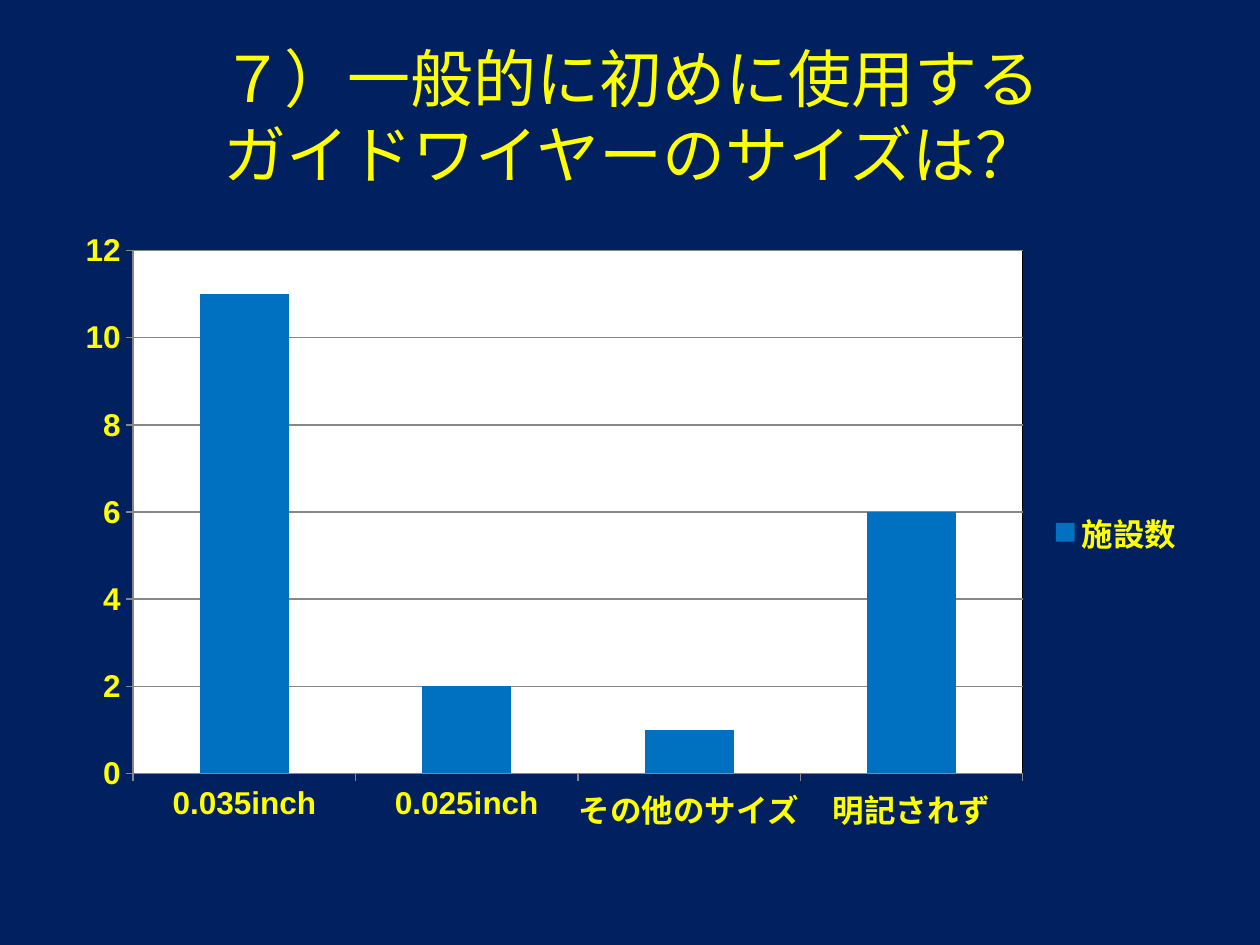
from dataclasses import dataclass

import pptx
import pptx.chart.data
import pptx.dml.color
import pptx.enum.chart
import pptx.enum.text
import pptx.oxml
import pptx.oxml.ns
import pptx.util
from pptx.util import Inches


@dataclass(frozen=True)
class Theme:
    font: str = "Arial"
    background: str = "002060"
    text: str = "FFFF00"
    bar: str = "0070C0"
    plot: str = "FFFFFF"
    plot_border: str = "000000"
    axis: str = "878787"
    title_size: int = 36
    chart_size: int = 18


THEME = Theme()


def color(value):
    return pptx.dml.color.RGBColor.from_string(value)


def style_font(font, size, bold):
    font.name = THEME.font
    font.size = pptx.util.Pt(size)
    font.bold = bold
    font.color.rgb = color(THEME.text)


def set_background(slide):
    fill = slide.background.fill
    fill.solid()
    fill.fore_color.rgb = color(THEME.background)


def add_title(slide, text):
    box = slide.shapes.add_textbox(Inches(0.51), Inches(0.29), Inches(9), Inches(1.25))
    frame = box.text_frame
    frame.word_wrap = True
    frame.vertical_anchor = pptx.enum.text.MSO_ANCHOR.MIDDLE
    paragraph = frame.paragraphs[0]
    paragraph.text = text
    paragraph.alignment = pptx.enum.text.PP_ALIGN.CENTER
    style_font(paragraph.font, THEME.title_size, False)


def fill_plot_area(chart):
    """Give the plot area its fill and border, which python-pptx does not expose."""
    properties = pptx.oxml.parse_xml(
        f'<c:spPr {pptx.oxml.ns.nsdecls("c", "a")}>'
        f'<a:solidFill><a:srgbClr val="{THEME.plot}"/></a:solidFill>'
        f'<a:ln w="9525"><a:solidFill><a:srgbClr val="{THEME.plot_border}"/></a:solidFill></a:ln>'
        "</c:spPr>"
    )
    chart.element.chart.plotArea.append(properties)


def style_axes(chart):
    value_axis = chart.value_axis
    value_axis.minimum_scale = 0
    value_axis.maximum_scale = 12
    value_axis.major_unit = 2
    value_axis.has_major_gridlines = True
    value_axis.major_gridlines.format.line.color.rgb = color(THEME.axis)
    for axis in (chart.category_axis, value_axis):
        axis.major_tick_mark = pptx.enum.chart.XL_TICK_MARK.OUTSIDE
        axis.format.line.color.rgb = color(THEME.axis)


def add_column_chart(slide, categories, series_name, values):
    data = pptx.chart.data.CategoryChartData()
    data.categories = categories
    data.add_series(series_name, values)
    chart = slide.shapes.add_chart(
        pptx.enum.chart.XL_CHART_TYPE.COLUMN_CLUSTERED,
        Inches(0.5), Inches(1.75), Inches(9), Inches(4.95), data,
    ).chart
    style_font(chart.font, THEME.chart_size, True)
    chart.has_title = False
    chart.has_legend = True
    chart.legend.position = pptx.enum.chart.XL_LEGEND_POSITION.RIGHT
    chart.legend.include_in_layout = False

    plot = chart.plots[0]
    plot.gap_width = 150
    plot.vary_by_categories = False
    bar_fill = plot.series[0].format.fill
    bar_fill.solid()
    bar_fill.fore_color.rgb = color(THEME.bar)
    style_axes(chart)
    fill_plot_area(chart)


def main():
    presentation = pptx.Presentation()
    presentation.slide_width = Inches(10)
    presentation.slide_height = Inches(7.5)
    slide = presentation.slides.add_slide(presentation.slide_layouts[6])
    set_background(slide)
    add_title(slide, "７）一般的に初めに使用する\vガイドワイヤーのサイズは？")
    add_column_chart(
        slide,
        ["0.035inch", "0.025inch", "その他のサイズ", "明記されず"],
        "施設数",
        [11, 2, 1, 6],
    )
    presentation.save("out.pptx")


if __name__ == "__main__":
    main()
